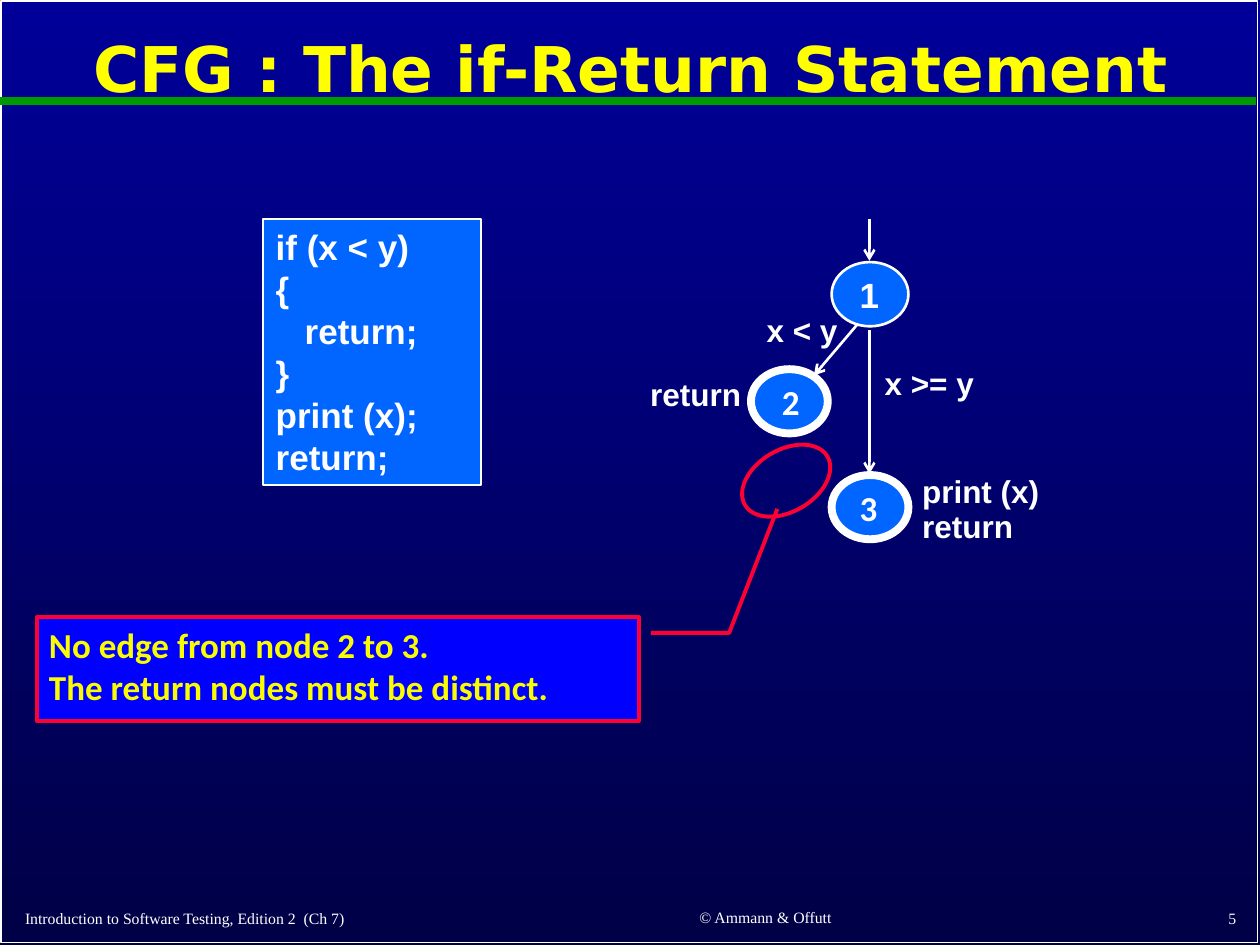
from dataclasses import dataclass
from typing import NamedTuple, Optional

from pptx import Presentation
from pptx.dml.color import RGBColor
from pptx.enum.shapes import MSO_CONNECTOR, MSO_SHAPE
from pptx.enum.text import MSO_ANCHOR, PP_ALIGN
from pptx.oxml.ns import qn
from pptx.util import Inches, Pt
from lxml.etree import SubElement

COLUMNS, ROWS = 100, 75  # grid over the slide
CELL = Inches(10) / COLUMNS


@dataclass(frozen=True)
class Theme:
    top: str = "000099"
    bottom: str = "000046"
    white: str = "FFFFFF"
    green: str = "009900"
    title: str = "FFFF00"
    node: str = "0066FF"
    note: str = "0000FF"
    note_text: str = "FAFD00"
    accent: str = "FF0033"
    title_size: float = 36
    body_size: float = 20
    label_size: float = 18
    footer_size: float = 9
    thin: float = 1
    edge: float = 1.5
    accent_line: float = 2.25
    thick: float = 4.5


class Box(NamedTuple):
    """Left, top, width and height in grid cells."""
    left: float
    top: float
    width: float
    height: float


class Style(NamedTuple):
    size: float
    color: str
    font: str = "Arial"
    bold: bool = True
    align: PP_ALIGN = PP_ALIGN.LEFT
    line_spacing: Optional[float] = None
    space_before: float = 0


class Node(NamedTuple):
    label: str
    left: float
    top: float
    border: float
    font: str
    align: PP_ALIGN = PP_ALIGN.LEFT


class Label(NamedTuple):
    text: str
    box: Box
    align: PP_ALIGN
    line_spacing: Optional[float] = None


class Arrow(NamedTuple):
    x1: float
    y1: float
    x2: float
    y2: float


THEME = Theme()
LEFT, CENTER, RIGHT = PP_ALIGN.LEFT, PP_ALIGN.CENTER, PP_ALIGN.RIGHT


def cells(*counts: float) -> list:
    return [round(count * CELL) for count in counts]


def set_text(shape, text: str, style: Style, wrap: bool = True,
             anchor: MSO_ANCHOR = MSO_ANCHOR.TOP) -> None:
    frame = shape.text_frame
    frame.text = text
    frame.word_wrap = wrap
    frame.vertical_anchor = anchor
    for paragraph in frame.paragraphs:
        paragraph.alignment = style.align
        paragraph.space_before = Pt(style.space_before)
        if style.line_spacing:
            paragraph.line_spacing = style.line_spacing
        for run in paragraph.runs:
            run.font.name = style.font
            run.font.size = Pt(style.size)
            run.font.bold = style.bold
            run.font.color.rgb = RGBColor.from_string(style.color)


def add_text(slide, box: Box, text: str, style: Style, **options):
    shape = slide.shapes.add_textbox(*cells(*box))
    set_text(shape, text, style, **options)
    return shape


def add_figure(slide, kind: MSO_SHAPE, box: Box, fill: Optional[str],
               line: str, width: float):
    shape = slide.shapes.add_shape(kind, *cells(*box))
    shape.shadow.inherit = False
    if fill:
        shape.fill.solid()
        shape.fill.fore_color.rgb = RGBColor.from_string(fill)
    else:
        shape.fill.background()
    shape.line.color.rgb = RGBColor.from_string(line)
    shape.line.width = Pt(width)
    return shape


def add_line(slide, ends: Arrow, color: str, width: float, arrow: bool = False) -> None:
    line = slide.shapes.add_connector(MSO_CONNECTOR.STRAIGHT, *cells(*ends))
    line.line.color.rgb = RGBColor.from_string(color)
    line.line.width = Pt(width)
    properties = line._element.spPr
    if arrow:
        SubElement(properties.find(qn("a:ln")), qn("a:tailEnd"), type="arrow")
    SubElement(properties, qn("a:effectLst"))


def add_node(slide, node: Node) -> None:
    add_figure(slide, MSO_SHAPE.OVAL, Box(node.left, node.top, 6.1, 5.1),
               THEME.node, THEME.white, node.border)
    style = Style(THEME.body_size, THEME.white, node.font, align=node.align)
    add_text(slide, Box(node.left + 1.25, node.top + 0.4, 3.6, 4.4),
             node.label, style, wrap=False)


def add_frame(slide) -> None:
    """Background, border, title and footer."""
    fill = slide.background.fill
    fill.gradient()
    fill.gradient_angle = 270
    for stop, color in zip(fill.gradient_stops, (THEME.top, THEME.bottom)):
        stop.color.rgb = RGBColor.from_string(color)

    add_figure(slide, MSO_SHAPE.RECTANGLE, Box(0.1, 0.1, 99.7, 74.7),
               None, THEME.white, THEME.thin)
    add_line(slide, Arrow(0, 8, 99.7, 8), THEME.green, THEME.thick)

    title = slide.shapes.title
    title.left, title.top, title.width, title.height = cells(0.8, 1.1, 98.5, 9.2)
    set_text(title, "CFG : The if-Return Statement",
             Style(THEME.title_size, THEME.title, "DejaVu Sans", align=CENTER,
                   line_spacing=0.9), anchor=MSO_ANCHOR.MIDDLE)

    footers = (
        Label("Introduction to Software Testing, Edition 2  (Ch 7)",
              Box(1, 71.6, 41.1, 2.6), LEFT),
        Label("© Ammann & Offutt", Box(44.9, 71.5, 31.7, 2.6), CENTER),
        Label("5", Box(78.3, 71.5, 20.8, 2.7), RIGHT),
    )
    for footer in footers:
        style = Style(THEME.footer_size, THEME.white, "Times New Roman", False, footer.align)
        add_text(slide, footer.box, footer.text, style, wrap=False,
                 anchor=MSO_ANCHOR.MIDDLE)


def add_code(slide) -> None:
    code = add_figure(slide, MSO_SHAPE.RECTANGLE, Box(20.9, 17.4, 17.3, 21.1),
                      THEME.node, THEME.white, THEME.thin)
    set_text(code, "if (x < y)\n{\nreturn;\n}\nprint (x);\nreturn;",
             Style(THEME.body_size, THEME.white))
    indented = code.text_frame.paragraphs[2]
    indented._p.get_or_add_pPr().set("marL", str(Inches(0.23)))


def add_graph(slide) -> None:
    for node in (Node("3", 66, 37.7, THEME.thick, "Calibri"),
                 Node("1", 66, 20.8, THEME.edge, "Arial"),
                 Node("2", 59.6, 29.3, THEME.thick, "Calibri", RIGHT)):
        add_node(slide, node)
    for arrow in (Arrow(68, 25.8, 64.6, 29.8), Arrow(69, 17.4, 69, 20.7),
                  Arrow(69, 26.2, 69, 37.6)):
        add_line(slide, arrow, THEME.white, THEME.edge, arrow=True)
    for label in (Label("x >= y", Box(68.4, 28.4, 10.7, 4), CENTER),
                  Label("x < y", Box(59.1, 24.2, 9.1, 4), CENTER),
                  Label("return", Box(48.4, 30.6, 11.4, 2.5), RIGHT, 0.5),
                  Label("print (x)\nreturn", Box(72.2, 38.3, 11.4, 5.6), LEFT, 0.5)):
        style = Style(THEME.label_size, THEME.white, align=label.align,
                      line_spacing=label.line_spacing,
                      space_before=THEME.label_size / 2)
        add_text(slide, label.box, label.text, style)


def add_note(slide) -> None:
    """Callout that points at the missing edge."""
    note = add_figure(slide, MSO_SHAPE.LINE_CALLOUT_2, Box(2.9, 49, 47.8, 8.2),
                      THEME.note, THEME.accent, THEME.accent_line)
    for index, value in enumerate((0.15, 1.02, 0.15, 1.15, -1.05, 1.23)):
        note.adjustments[index] = value
    set_text(note, "No edge from node 2 to 3.\nThe return nodes must be distinct.",
             Style(THEME.body_size, THEME.note_text, "Calibri"))
    ring = add_figure(slide, MSO_SHAPE.OVAL, Box(58.6, 35.7, 7.6, 4.9),
                      None, THEME.accent, THEME.accent_line)
    ring.rotation = 329.5


def main() -> None:
    presentation = Presentation()
    presentation.slide_width, presentation.slide_height = cells(COLUMNS, ROWS)
    slide = presentation.slides.add_slide(presentation.slide_layouts[5])
    add_frame(slide)
    add_code(slide)
    add_graph(slide)
    add_note(slide)
    presentation.save("out.pptx")


if __name__ == "__main__":
    main()
